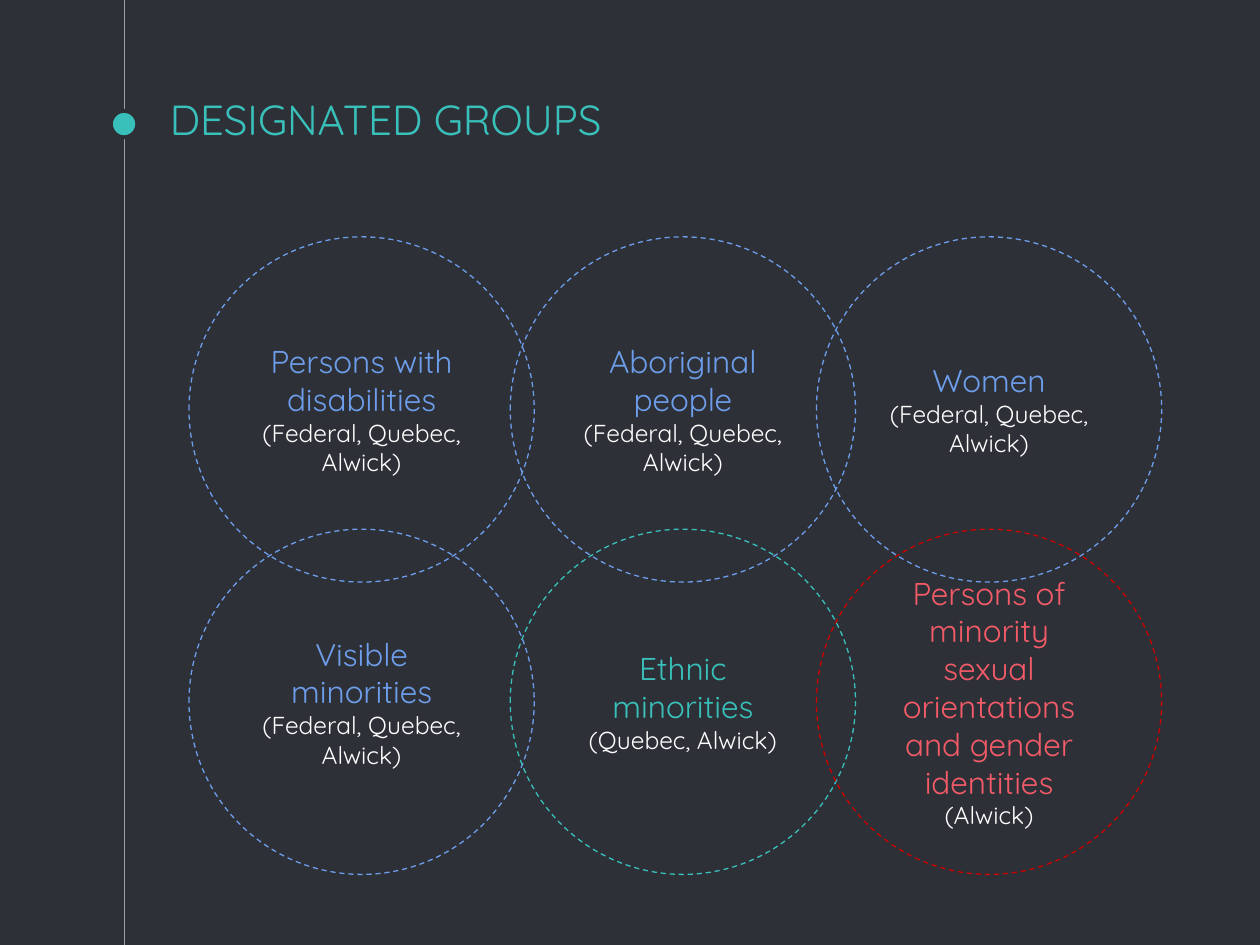
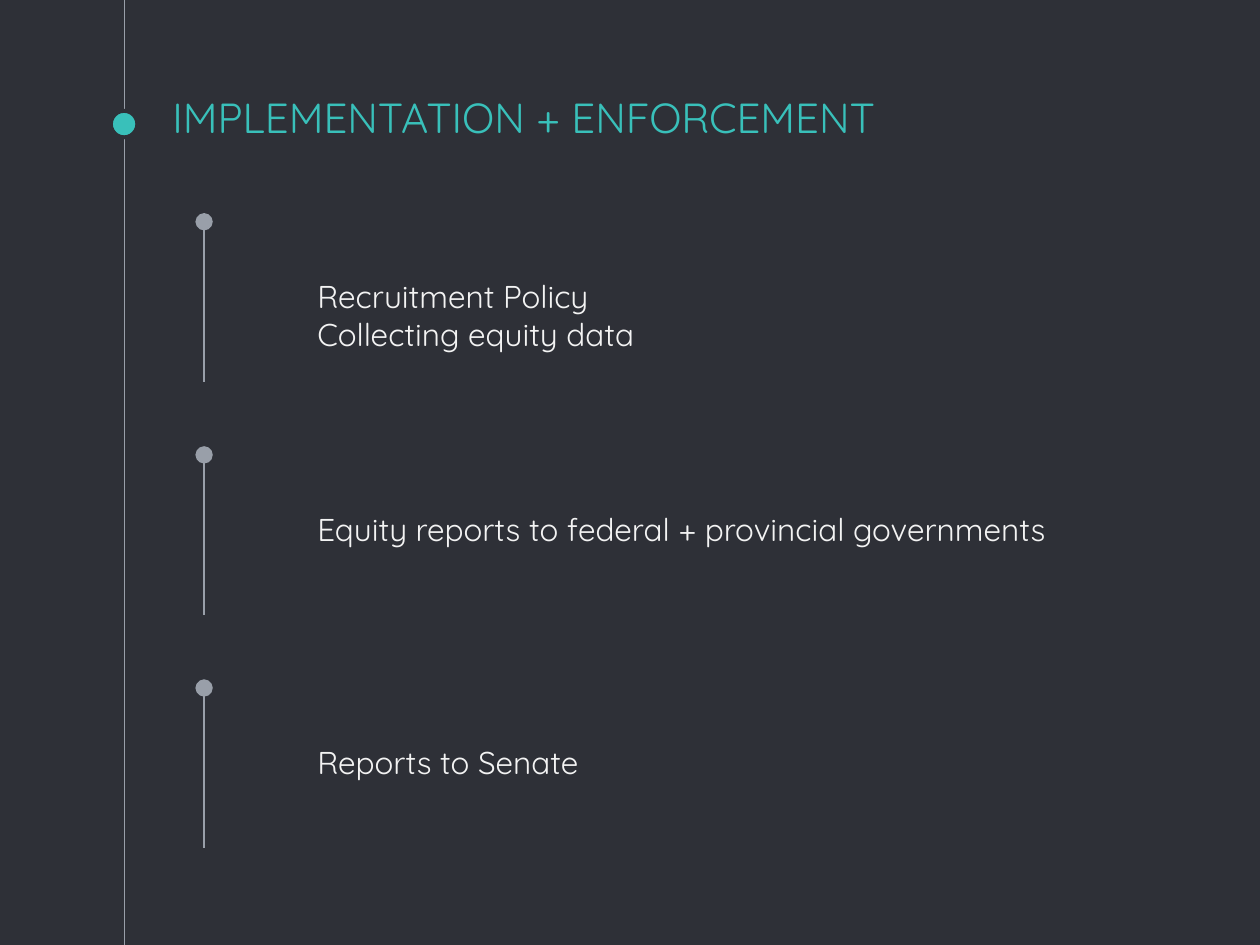
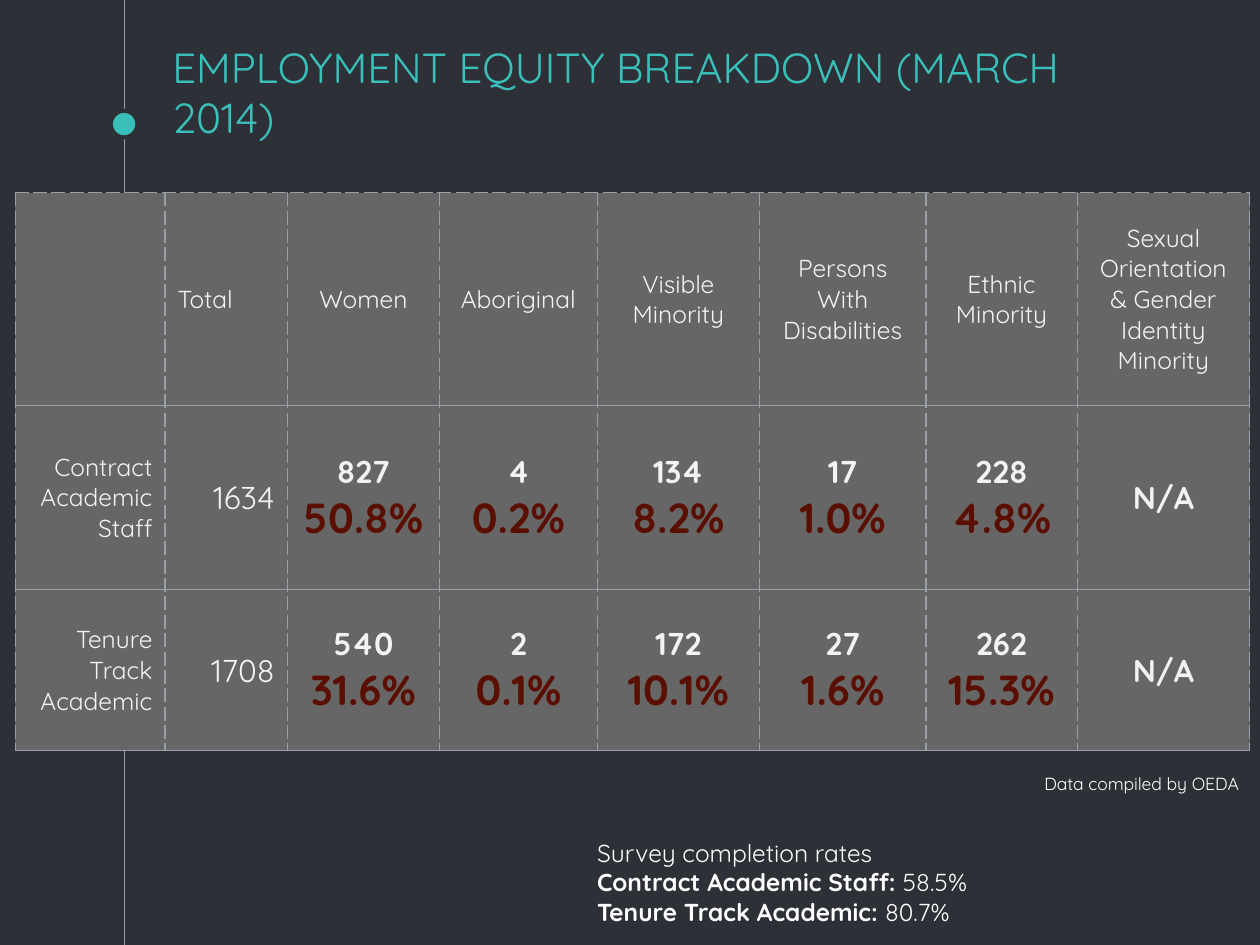
from lxml.etree import SubElement
from pptx import Presentation
from pptx.dml.color import RGBColor
from pptx.enum.dml import MSO_LINE
from pptx.enum.shapes import MSO_CONNECTOR, MSO_SHAPE
from pptx.enum.text import MSO_ANCHOR, PP_ALIGN
from pptx.oxml.ns import qn
from pptx.util import Inches, Pt

FONT = "Quicksand"
DARK = RGBColor(0x2E, 0x30, 0x37)
TEAL = RGBColor(0x39, 0xC0, 0xBA)
GREY = RGBColor(0x99, 0x9F, 0xA9)
BLUE = RGBColor(0x6D, 0x9E, 0xEB)
RED = RGBColor(0xCC, 0x00, 0x00)
CORAL = RGBColor(0xF3, 0x5B, 0x69)
WHITE = RGBColor(0xFF, 0xFF, 0xFF)
PALE = RGBColor(0xF3, 0xF3, 0xF3)
CELL = RGBColor(0x66, 0x66, 0x66)
MAROON = RGBColor(0x5B, 0x0F, 0x00)

ALL_LEVELS = "(Federal, Quebec, Alwick)"
CIRCLE_COLUMNS = (1.5, 4.05, 6.48)
CIRCLE_ROWS = (1.88, 4.2)
GROUPS = (
    (("Persons with disabilities", ALL_LEVELS, BLUE, BLUE),
     ("Aboriginal people", ALL_LEVELS, BLUE, BLUE),
     ("Women", ALL_LEVELS, BLUE, BLUE)),
    (("Visible minorities", ALL_LEVELS, BLUE, BLUE),
     ("Ethnic minorities", "(Quebec, Alwick)", TEAL, TEAL),
     ("Persons of minority sexual orientations and gender identities",
      "(Alwick)", CORAL, RED)),
)
STEPS = (
    ("Recruitment Policy", "Collecting equity data"),
    ("Equity reports to federal + provincial governments",),
    ("Reports to Senate",),
)
COLUMN_WIDTHS = (1.19, 0.97, 1.21, 1.25, 1.29, 1.32, 1.2, 1.37)
ROW_HEIGHTS = (1.69, 1.46, 1.28)
HEADERS = ("", "Total", "Women", "Aboriginal", "Visible Minority",
           "Persons With Disabilities", "Ethnic Minority",
           "Sexual Orientation & Gender Identity Minority")
STAFF = (
    ("Contract Academic Staff", "1634", ("827", "50.8%"), ("4", "0.2%"),
     ("134", "8.2%"), ("17", "1.0%"), ("228", "4.8%"), ("N/A",)),
    ("Tenure Track Academic", "1708", ("540", "31.6%"), ("2", "0.1%"),
     ("172", "10.1%"), ("27", "1.6%"), ("262", "15.3%"), ("N/A",)),
)


def write(tf, lines, align=PP_ALIGN.LEFT):
    """Fill a text frame with (text, size, colour, bold) paragraphs."""
    for i, (text, size, color, bold) in enumerate(lines):
        p = tf.paragraphs[0] if i == 0 else tf.add_paragraph()
        p.text = text
        p.alignment = align
        p.font.name = FONT
        p.font.size = Pt(size)
        p.font.color.rgb = color
        p.font.bold = bold


def set_frame(tf, anchor):
    """Give a text frame wrapping, even insets and an anchor."""
    tf.word_wrap = True
    tf.vertical_anchor = anchor
    tf.margin_left = tf.margin_right = Inches(0.1)
    tf.margin_top = tf.margin_bottom = Inches(0.1)


def add_text(slide, box, lines, anchor=MSO_ANCHOR.TOP, align=PP_ALIGN.LEFT):
    """Add a text box and return its text frame."""
    tf = slide.shapes.add_textbox(*map(Inches, box)).text_frame
    set_frame(tf, anchor)
    write(tf, lines, align)
    return tf


def add_line(slide, x, start, end):
    """Add a thin grey vertical line."""
    sp = slide.shapes.add_connector(MSO_CONNECTOR.STRAIGHT, Inches(x), Inches(start),
                                    Inches(x), Inches(end))
    sp.line.color.rgb = GREY
    sp.line.width = Pt(0.75)
    SubElement(sp._element.spPr, qn("a:effectLst"))
    return sp


def add_ellipse(slide, box, line_color, line_width):
    """Add an unfilled ellipse."""
    sp = slide.shapes.add_shape(MSO_SHAPE.OVAL, *map(Inches, box))
    sp.shadow.inherit = False
    sp.fill.background()
    sp.line.color.rgb = line_color
    sp.line.width = Pt(line_width)
    return sp


def add_base_slide(prs, title, title_box):
    """Add a slide with the timeline, its dot and a title."""
    slide = prs.slides.add_slide(prs.slide_layouts[6])
    add_line(slide, 0.99, 0, 7.5)
    dot = add_ellipse(slide, (0.88, 0.88, 0.21, 0.21), DARK, 2.25)
    dot.fill.solid()
    dot.fill.fore_color.rgb = TEAL
    add_text(slide, title_box, [(title, 24, TEAL, False)], MSO_ANCHOR.BOTTOM)
    return slide


def add_group_circle(slide, box, group):
    """Add a dashed circle naming a group and who designates it."""
    name, levels, text_color, line_color = group
    sp = add_ellipse(slide, box, line_color, 0.75)
    sp.line.dash_style = MSO_LINE.DASH
    set_frame(sp.text_frame, MSO_ANCHOR.MIDDLE)
    write(sp.text_frame, [(name, 18, text_color, False), (levels, 14, WHITE, False)],
          PP_ALIGN.CENTER)


def add_step(slide, box, lines):
    """Add a dotted marker line with text beside it."""
    left, top, width, height = box
    sp = add_line(slide, left, top + height, top)
    ln = sp.line._get_or_add_ln()
    SubElement(ln, qn("a:tailEnd"), type="oval", w="lg", len="lg")
    add_text(slide, (left + 0.8, top + 0.34, width - 0.8, height),
             [(text, 18, PALE, False) for text in lines])


def set_borders(cell, dashed_sides):
    """Draw four thin grey cell borders, some of them dashed."""
    tcPr = cell._tc.get_or_add_tcPr()
    for side in "LRTB":
        ln = SubElement(tcPr, qn(f"a:ln{side}"), w=str(Pt(0.75)))
        fill = SubElement(ln, qn("a:solidFill"))
        SubElement(fill, qn("a:srgbClr"), val=str(GREY))
        SubElement(ln, qn("a:prstDash"), val="dash" if side in dashed_sides else "solid")


def cell_content(row, col, value):
    """Return the paragraphs and alignment of a table cell."""
    if row == 0:
        return [(value, 14, PALE, False)], PP_ALIGN.LEFT if col < 2 else PP_ALIGN.CENTER
    if col < 2:
        return [(value, 18 if col else 14, PALE, False)], PP_ALIGN.RIGHT
    styles = ((18, PALE, True), (24, MAROON, True))
    return [(text, *style) for text, style in zip(value, styles)], PP_ALIGN.CENTER


def add_equity_table(slide, left, top):
    """Add the table of staff counts and shares."""
    rows = (HEADERS, *STAFF)
    table = slide.shapes.add_table(
        len(rows), len(HEADERS), Inches(left), Inches(top),
        Inches(sum(COLUMN_WIDTHS)), Inches(sum(ROW_HEIGHTS))).table
    table.first_row = table.horz_banding = False
    for column, width in zip(table.columns, COLUMN_WIDTHS):
        column.width = Inches(width)
    for i, (values, height) in enumerate(zip(rows, ROW_HEIGHTS)):
        table.rows[i].height = Inches(height)
        for j, value in enumerate(values):
            cell = table.cell(i, j)
            set_borders(cell, "LR" if i else "LRT")
            cell.fill.solid()
            cell.fill.fore_color.rgb = CELL
            cell.vertical_anchor = MSO_ANCHOR.MIDDLE
            cell.margin_left = cell.margin_right = Inches(0.1)
            cell.margin_top = cell.margin_bottom = Inches(0.1)
            lines, align = cell_content(i, j, value)
            write(cell.text_frame, lines, align)


def add_completion_rates(slide, box):
    """Add the survey completion rates with bold labels."""
    rates = (("Contract Academic Staff: ", "58.5%"), ("Tenure Track Academic: ", "80.7%"))
    lines = [("Survey completion rates", 14, WHITE, False)]
    lines += [(label, 14, WHITE, None) for label, _ in rates]
    tf = add_text(slide, box, lines)
    for p, (_, rate) in zip(tf.paragraphs[1:], rates):
        p.runs[0].font.bold = True
        p.add_run().text = rate


def build_groups(prs):
    """Build the slide of designated groups."""
    slide = add_base_slide(prs, "DESIGNATED GROUPS", (1.25, 0.3, 7.5, 0.94))
    for top, row in zip(CIRCLE_ROWS, GROUPS):
        for left, group in zip(CIRCLE_COLUMNS, row):
            add_group_circle(slide, (left, top, 2.74, 2.74), group)


def build_implementation(prs):
    """Build the slide of implementation steps."""
    slide = add_base_slide(prs, "IMPLEMENTATION + ENFORCEMENT", (1.27, 0.73, 7.5, 0.5))
    for i, lines in enumerate(STEPS):
        add_step(slide, (1.62, 1.76 + 1.85 * i, 8.04, 1.27), lines)


def build_breakdown(prs):
    """Build the slide of the employment equity table."""
    slide = add_base_slide(prs, "EMPLOYMENT EQUITY BREAKDOWN (MARCH 2014)",
                           (1.27, 0.73, 7.5, 0.5))
    add_equity_table(slide, 0.12, 1.53)
    add_completion_rates(slide, (4.64, 6.55, 4.57, 0.81))
    add_text(slide, (7.31, 6.05, 2.62, 0.4),
             [("Data compiled by OEDA", 10, WHITE, False)], align=PP_ALIGN.RIGHT)


def main():
    """Build and save the presentation."""
    prs = Presentation()
    prs.slide_width, prs.slide_height = Inches(10), Inches(7.5)
    background = prs.slide_master.background.fill
    background.solid()
    background.fore_color.rgb = DARK
    build_groups(prs)
    build_implementation(prs)
    build_breakdown(prs)
    prs.save("out.pptx")


if __name__ == "__main__":
    main()
